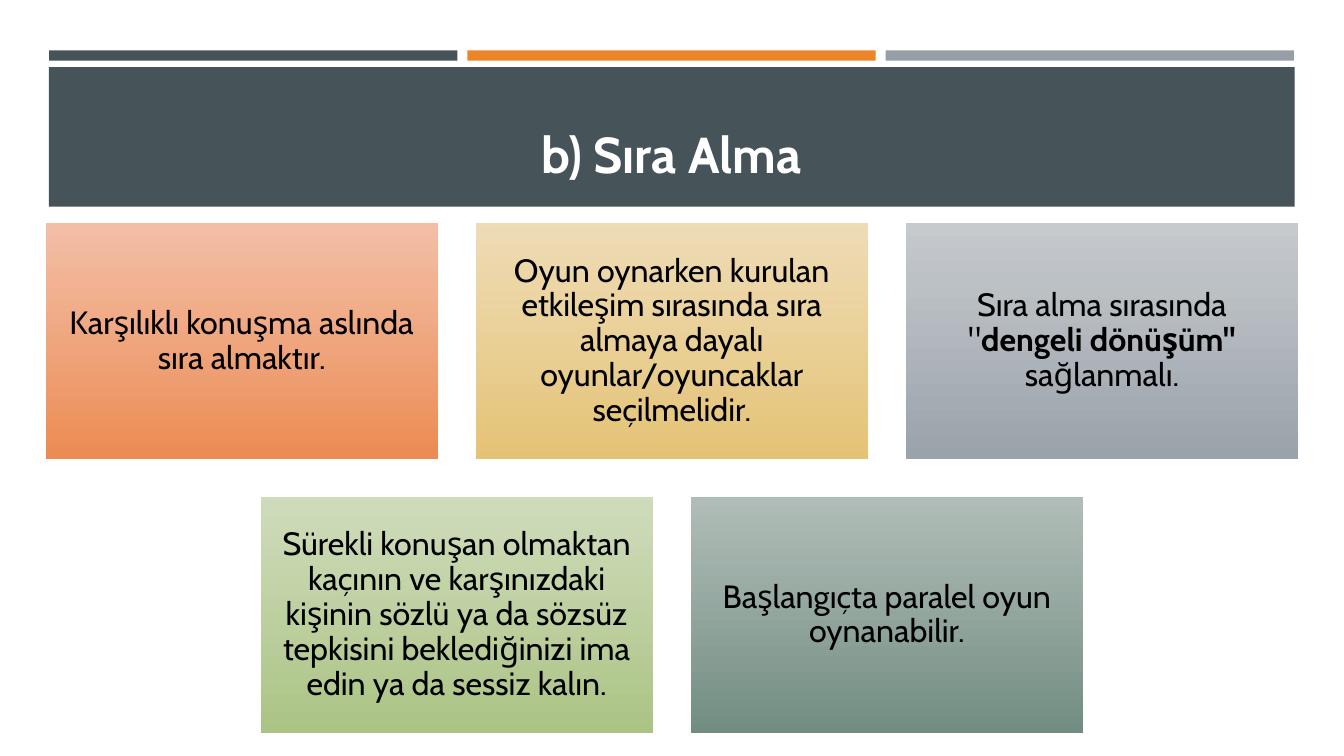
import pptx
import pptx.util
import pptx.dml.color
import pptx.enum.shapes
import pptx.enum.text
import pptx.oxml.ns
from lxml import etree

Cm = pptx.util.Cm
ANCHOR = pptx.enum.text.MSO_ANCHOR

TITLE = "b) Sıra Alma"
# Each card: (top colour, bottom colour, [(text, bold), ...])
CARD_ROWS = [
    [
        ("peach", "orange", [("Karşılıklı konuşma aslında sıra almaktır.", False)]),
        ("cream", "gold", [("Oyun oynarken kurulan etkileşim sırasında sıra almaya "
                            "dayalı oyunlar/oyuncaklar seçilmelidir.", False)]),
        ("silver", "steel", [('Sıra alma sırasında "', False),
                             ('dengeli dönüşüm" ', True),
                             ("sağlanmalı.", False)]),
    ],
    [
        ("pale green", "green", [("Sürekli konuşan olmaktan kaçının ve karşınızdaki kişinin "
                                  "sözlü ya da sözsüz tepkisini beklediğinizi ima edin ya da "
                                  "sessiz kalın.", False)]),
        ("mist", "pine", [("Başlangıçta paralel oyun oynanabilir.", False)]),
    ],
]
STRIPES = ["slate", "stripe orange", "stripe grey"]
COLOURS = {
    "slate": "465359", "stripe orange": "ED8428", "stripe grey": "969FA7",
    "peach": "F3B89D", "orange": "ED8C53", "cream": "EED9AE", "gold": "E6C476",
    "silver": "C0C5C9", "steel": "9BA3AB", "pale green": "CAD9B4", "green": "ACC485",
    "mist": "A8B6B0", "pine": "728E82", "white": "FFFFFF", "black": "000000",
}
FONT = "Cabin"

SLIDE_W, SLIDE_H = 33.87, 19.05
STRIPE_LEFT, STRIPE_TOP, STRIPE_W, STRIPE_H, STRIPE_PITCH = 1.24, 1.27, 10.29, 0.26, 10.54
CARD_W, CARD_H, CARD_GAP, CARDS_TOP = 9.86, 5.92, 0.98, 5.64


def rgb(name):
    return pptx.dml.color.RGBColor.from_string(COLOURS[name])


def add_block(slide, left, top, width, height):
    """Add a rectangle without line or shadow; lengths in cm."""
    block = slide.shapes.add_shape(pptx.enum.shapes.MSO_SHAPE.RECTANGLE,
                                   Cm(left), Cm(top), Cm(width), Cm(height))
    block.shadow.inherit = False
    block.line.fill.background()
    return block


def add_solid_block(slide, colour, *box):
    block = add_block(slide, *box)
    block.fill.solid()
    block.fill.fore_color.rgb = rgb(colour)


def fill_downwards(block, top_colour, bottom_colour):
    """Fade from a 90 % opaque top colour to the bottom colour."""
    block.fill.gradient()
    block.fill.gradient_angle = 270
    stops = block.fill.gradient_stops
    for stop, colour, position in zip(stops, (top_colour, bottom_colour), (0, 1)):
        stop.color.rgb = rgb(colour)
        stop.position = position
    qn = pptx.oxml.ns.qn
    top_rgb = next(block.fill._xPr.iter(qn("a:srgbClr")))
    etree.SubElement(top_rgb, qn("a:alpha")).set("val", "90000")


def write(frame, pieces, size, colour, anchor):
    frame.word_wrap = True
    frame.vertical_anchor = anchor
    paragraph = frame.paragraphs[0]
    paragraph.alignment = pptx.enum.text.PP_ALIGN.CENTER
    paragraph.line_spacing = 0.9
    for text, bold in pieces:
        run = paragraph.add_run()
        run.text = text
        run.font.name = FONT
        run.font.size = pptx.util.Pt(size)
        run.font.bold = bold
        run.font.color.rgb = rgb(colour)


def add_card(slide, left, top, top_colour, bottom_colour, pieces):
    card = add_block(slide, left, top, CARD_W, CARD_H)
    fill_downwards(card, top_colour, bottom_colour)
    frame = card.text_frame
    frame.margin_left = frame.margin_right = Cm(0.25)
    frame.margin_top = frame.margin_bottom = Cm(0.25)
    write(frame, pieces, 23, "black", ANCHOR.MIDDLE)


def main():
    deck = pptx.Presentation()
    deck.slide_width, deck.slide_height = Cm(SLIDE_W), Cm(SLIDE_H)
    slide = deck.slides.add_slide(deck.slide_layouts[6])

    for column, colour in enumerate(STRIPES):
        add_solid_block(slide, colour, STRIPE_LEFT + column * STRIPE_PITCH,
                        STRIPE_TOP, STRIPE_W, STRIPE_H)

    add_solid_block(slide, "slate", 1.23, 1.69, 31.4, 3.52)
    title = slide.shapes.add_textbox(Cm(1.6), Cm(2.03), Cm(30.63), Cm(2.74))
    write(title.text_frame, [(TITLE, True)], 36, "white", ANCHOR.BOTTOM)

    for row, cards in enumerate(CARD_ROWS):
        row_w = len(cards) * (CARD_W + CARD_GAP) - CARD_GAP
        row_left = (SLIDE_W - row_w) / 2
        top = CARDS_TOP + row * (CARD_H + CARD_GAP)
        for column, card in enumerate(cards):
            add_card(slide, row_left + column * (CARD_W + CARD_GAP), top, *card)

    deck.save("out.pptx")


if __name__ == "__main__":
    main()
